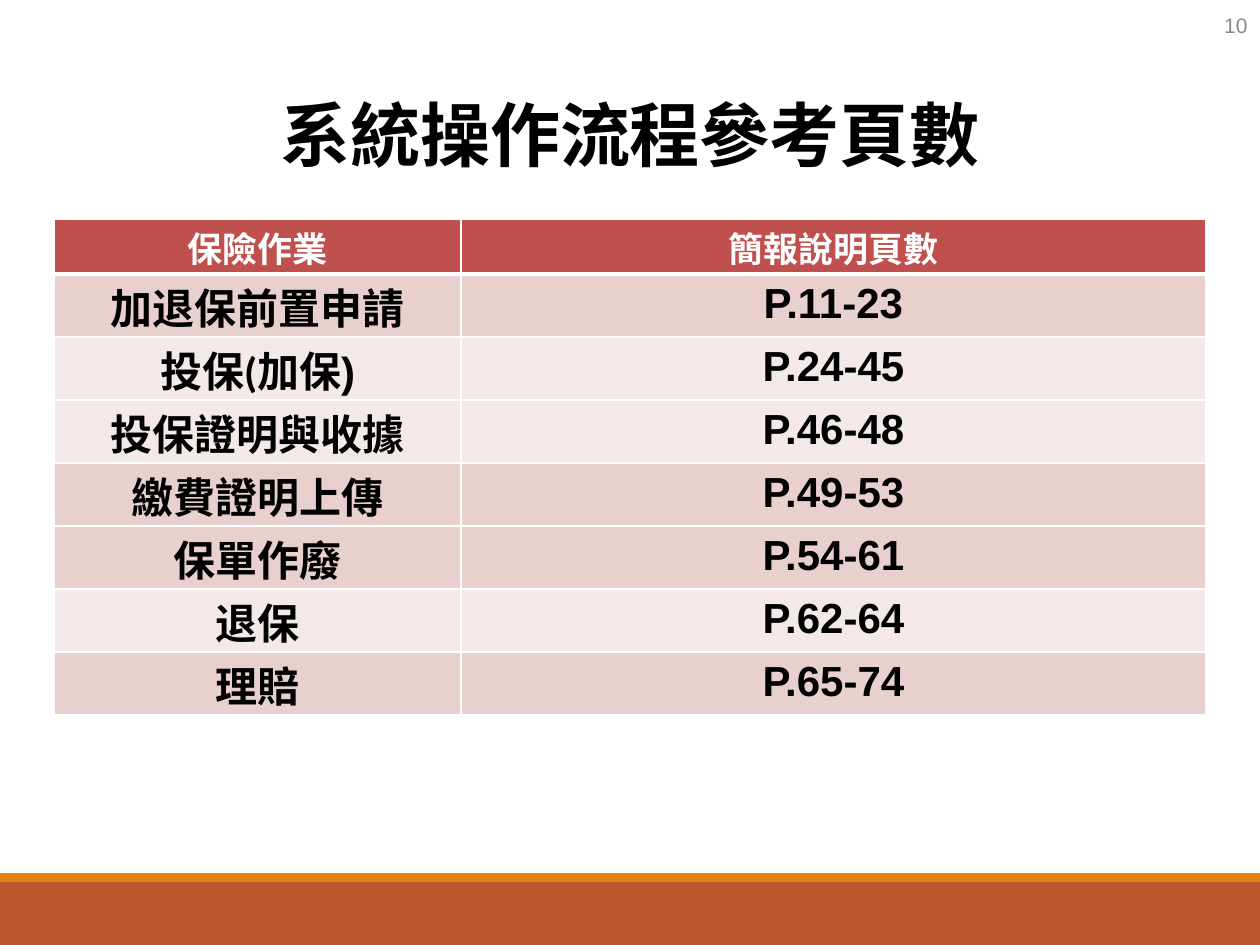
from lxml import etree
from pptx import Presentation
from pptx.dml.color import RGBColor
from pptx.enum import shapes, text
from pptx.oxml import ns
from pptx.util import Pt

COLORS = {
    "white": "FFFFFF", "black": "000000", "gray": "898989",
    "header": "C0504D", "dark": "E8D0CF", "light": "F4E9E9",
    "band": "BD582C", "stripe": "E48312",
}
CJK_FONT = "Noto Sans CJK SC"
HEADINGS = ("保險作業", "簡報說明頁數")
# Task name as (text, font) runs, page range, row shade
TASKS = [
    ([("加退保前置申請", "Arial")], "P.11-23", "dark"),
    ([("投保", "Arial"), ("(加保", "Calibri"), (")", "Arial")], "P.24-45", "light"),
    ([("投保證明與收據", "Arial")], "P.46-48", "light"),
    ([("繳費證明上傳", "Arial")], "P.49-53", "dark"),
    ([("保單作廢", "Arial")], "P.54-61", "dark"),
    ([("退保", "Arial")], "P.62-64", "light"),
    ([("理賠", "Arial")], "P.65-74", "dark"),
]


def color(name):
    return RGBColor.from_string(COLORS[name])


def write(frame, runs, size, ink, bold=True, align=text.PP_ALIGN.CENTER):
    """Fill the first paragraph with (text, font) runs."""
    paragraph = frame.paragraphs[0]
    paragraph.alignment = align
    for words, font_name in runs:
        run = paragraph.add_run()
        run.text = words
        run.font.name = font_name
        run.font.size = Pt(size)
        run.font.bold = bold
        run.font.color.rgb = color(ink)
        east_asian = etree.SubElement(run.font._element, ns.qn("a:ea"))
        east_asian.set("typeface", CJK_FONT)


def add_text(slide, box, runs, size, ink, **style):
    frame = slide.shapes.add_textbox(*map(Pt, box)).text_frame
    write(frame, runs, size, ink, **style)
    return frame


def add_footer(slide, left, top, width, height, stripe_height=5):
    bars = (
        ("band", top + stripe_height, height - stripe_height),
        ("stripe", top, stripe_height),
    )
    for name, bar_top, bar_height in bars:
        bar = slide.shapes.add_shape(
            shapes.MSO_SHAPE.RECTANGLE, Pt(left), Pt(bar_top), Pt(width), Pt(bar_height))
        bar.shadow.inherit = False
        bar.fill.solid()
        bar.fill.fore_color.rgb = color(name)
        bar.line.fill.background()


def set_borders(cell, top, bottom):
    properties = cell._tc.get_or_add_tcPr()
    widths = {"lnL": 0.96, "lnR": 0.96, "lnT": top, "lnB": bottom}
    for index, (side, width) in enumerate(widths.items()):
        line = etree.Element(ns.qn(f"a:{side}"), w=str(Pt(width)))
        fill = etree.SubElement(line, ns.qn("a:solidFill"))
        etree.SubElement(fill, ns.qn("a:srgbClr"), val=COLORS["white"])
        properties.insert(index, line)


def add_page_table(slide, left, top, width, header_height=31, row_height=36):
    height = header_height + row_height * len(TASKS)
    table = slide.shapes.add_table(
        len(TASKS) + 1, 2, Pt(left), Pt(top), Pt(width), Pt(height)).table
    first_width = 232.5
    table.columns[0].width = Pt(first_width)
    table.columns[1].width = Pt(width - first_width)

    rows = [([[(heading, "Arial")] for heading in HEADINGS], "header")]
    rows += [([task, [(pages, "Arial")]], shade) for task, pages, shade in TASKS]
    for row_index, (contents, shade) in enumerate(rows):
        is_header = row_index == 0
        table.rows[row_index].height = Pt(header_height if is_header else row_height)
        for column, runs in enumerate(contents):
            cell = table.cell(row_index, column)
            is_pages = column == 1 and not is_header
            cell.margin_top = Pt(3.6 if is_pages else 1)
            cell.margin_bottom = Pt(0)
            cell.vertical_anchor = text.MSO_ANCHOR.TOP
            cell.fill.solid()
            cell.fill.fore_color.rgb = color(shade)
            set_borders(cell, top=3 if row_index == 1 else 0.96,
                        bottom=3 if is_header else 0.96)
            write(cell.text_frame, runs, 20 if is_header else 24,
                  "white" if is_header else "black")


def main():
    presentation = Presentation()
    presentation.slide_width, presentation.slide_height = Pt(720), Pt(540)
    slide = presentation.slides.add_slide(presentation.slide_layouts[6])
    add_footer(slide, 0, 499, 720, 41)
    title = add_text(slide, (153, 49, 414, 55.5),
                     [("系統操作流程參考頁數", CJK_FONT)], 40, "black")
    title.word_wrap = False
    add_page_table(slide, 31, 125.5, 658)
    number = add_text(slide, (642, 0, 78, 29), [("10", "Arial")], 12, "gray",
                      bold=False, align=text.PP_ALIGN.RIGHT)
    number.word_wrap = True
    number.vertical_anchor = text.MSO_ANCHOR.MIDDLE
    presentation.save("out.pptx")


if __name__ == "__main__":
    main()
